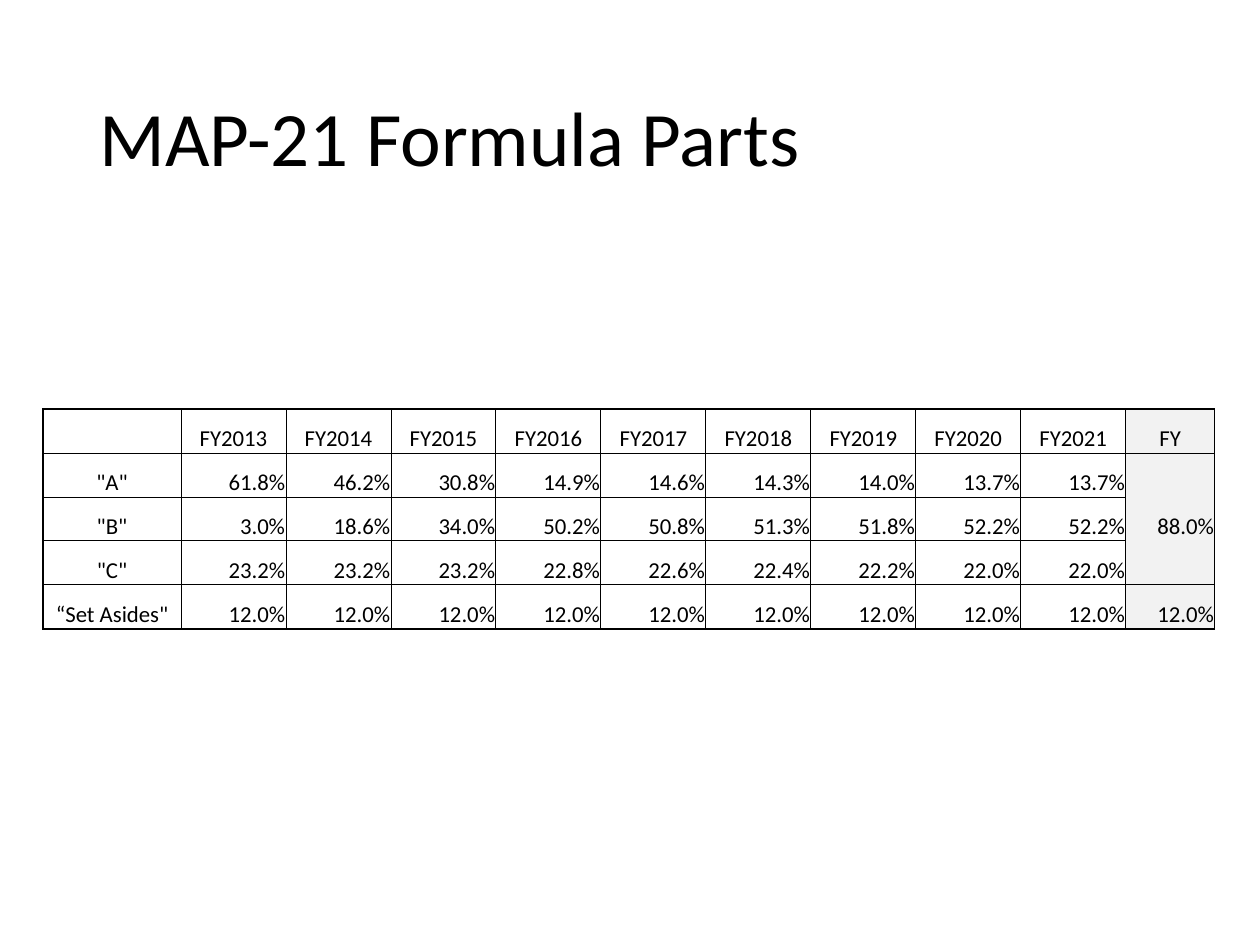
"""Build the slide with the MAP-21 formula parts table."""
from dataclasses import dataclass

from lxml import etree
from pptx import Presentation
from pptx.dml.color import RGBColor
from pptx.enum.text import MSO_ANCHOR, PP_ALIGN
from pptx.oxml.ns import qn
from pptx.util import Emu, Pt

LEFT, CENTER, RIGHT = PP_ALIGN.LEFT, PP_ALIGN.CENTER, PP_ALIGN.RIGHT
MIDDLE, BOTTOM = MSO_ANCHOR.MIDDLE, MSO_ANCHOR.BOTTOM
BLACK = RGBColor(0x00, 0x00, 0x00)
GRAY = RGBColor(0xF2, 0xF2, 0xF2)
SCALE = 914400 / 126
FONT = "Calibri"
THIN, THICK = 0.5, 1
YEARS = range(2013, 2022)
WIDTHS = [138] + [105] * len(YEARS) + [89]
HIGH = 44


@dataclass
class Part:
    name: str
    shares: list[str]
    total: str = ""


PARTS = [
    Part("", [f"FY{year}" for year in YEARS], "FY"),
    Part('"A"', ["61.8%", "46.2%", "30.8%", "14.9%", "14.6%", "14.3%", "14.0%", "13.7%", "13.7%"]),
    Part('"B"', ["3.0%", "18.6%", "34.0%", "50.2%", "50.8%", "51.3%", "51.8%", "52.2%", "52.2%"], "88.0%"),
    Part('"C"', ["23.2%", "23.2%", "23.2%", "22.8%", "22.6%", "22.4%", "22.2%", "22.0%", "22.0%"]),
    Part('“Set Asides"', ["12.0%"] * len(YEARS), "12.0%"),
]


def px(size: int) -> Emu:
    """Turn pixels into EMU."""
    return Emu(round(size * SCALE))


def write(frame, text: str, *, size: int, align=LEFT, spacing: float = 1.0) -> None:
    """Write one formatted line into a text frame."""
    line = frame.paragraphs[0]
    line.alignment = align
    line.line_spacing = spacing
    if text:
        run = line.add_run()
        run.text = text
        font = run.font
        font.name, font.size, font.bold = FONT, Pt(size), False
        font.color.rgb = BLACK


def edge(cell, side: str, width: float) -> None:
    """Draw one cell border, or clear it when the width is zero."""
    props = cell._tc.get_or_add_tcPr()
    line = etree.SubElement(props, qn(f"a:ln{side}"), w=str(Pt(width)))
    if width:
        fill = etree.SubElement(line, qn("a:solidFill"))
        etree.SubElement(fill, qn("a:srgbClr"), val=str(BLACK))
    else:
        etree.SubElement(line, qn("a:noFill"))


def draw_cell(cell, text: str, row: int, col: int) -> None:
    """Fill, frame and label one table cell."""
    end, last = len(PARTS) - 1, len(WIDTHS) - 1
    total = col == last
    edge(cell, "L", THICK if col == 0 else THIN)
    edge(cell, "R", THICK if total else THIN)
    edge(cell, "T", THICK if row == 0 else 0 if total and row in (2, 3) else THIN)
    edge(cell, "B", THICK if row == end else 0 if total and row in (1, 2) else THIN)
    if total:
        cell.fill.solid()
        cell.fill.fore_color.rgb = GRAY
    else:
        cell.fill.background()
    cell.margin_left = cell.margin_right = cell.margin_top = px(1)
    cell.margin_bottom = 0
    cell.vertical_anchor = BOTTOM
    write(cell.text_frame, text, size=13, align=CENTER if row == 0 or col == 0 else RIGHT)


def draw_title(slide, text: str) -> None:
    """Place the slide title."""
    frame = slide.shapes.add_textbox(px(87), px(50), px(1086), px(183)).text_frame
    frame.word_wrap = True
    frame.vertical_anchor = MIDDLE
    write(frame, text, size=44, spacing=0.9)


def draw_table(slide, parts: list[Part]) -> None:
    """Place the table of formula parts by year."""
    shape = slide.shapes.add_table(
        len(parts), len(WIDTHS), px(43), px(409), px(sum(WIDTHS)), px(HIGH * len(parts))
    )
    table = shape.table
    table.first_row = table.horz_banding = False
    for column, width in zip(table.columns, WIDTHS):
        column.width = px(width)
    for row, part in enumerate(parts):
        table.rows[row].height = px(HIGH)
        for col, text in enumerate([part.name, *part.shares, part.total]):
            draw_cell(table.cell(row, col), text, row, col)


def main() -> None:
    """Build and save the slide."""
    deck = Presentation()
    deck.slide_width, deck.slide_height = px(1260), px(945)
    slide = deck.slides.add_slide(deck.slide_layouts[6])
    draw_title(slide, "MAP-21 Formula Parts")
    draw_table(slide, PARTS)
    deck.save("out.pptx")


if __name__ == "__main__":
    main()
